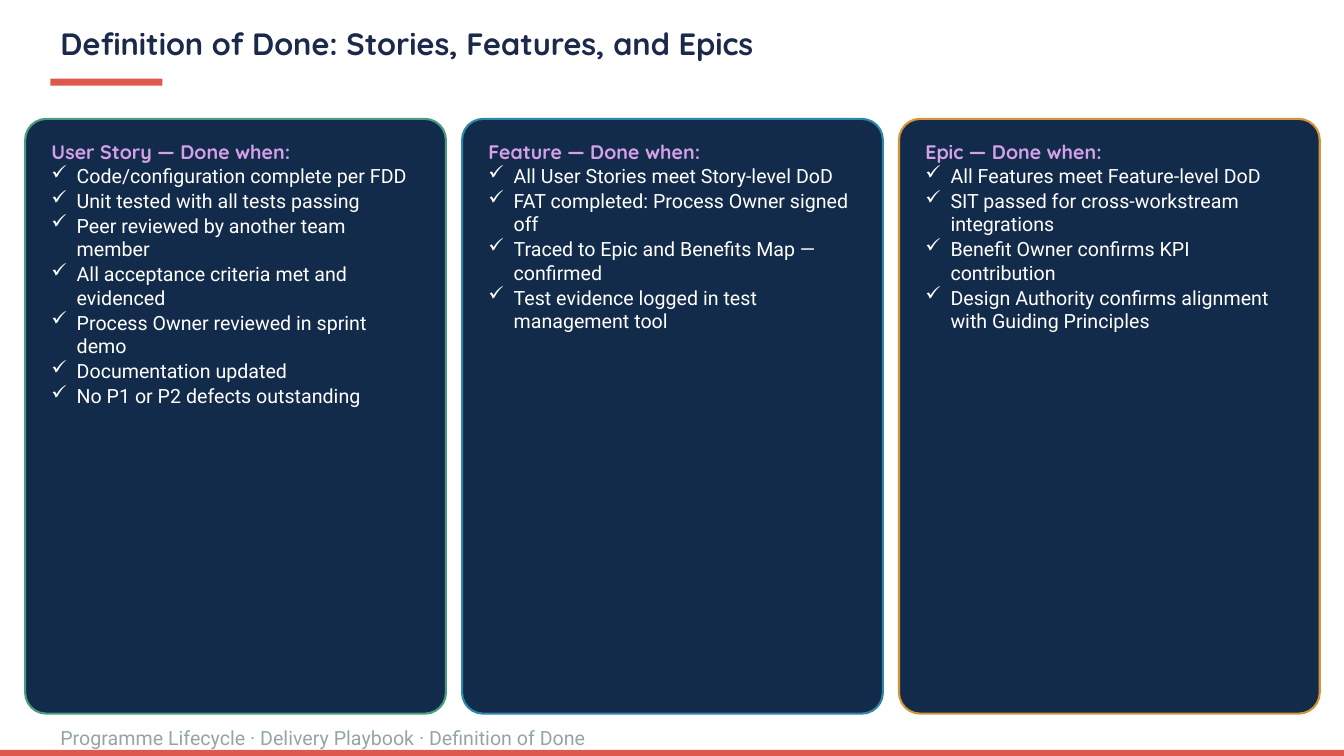
from lxml import etree
from pptx import Presentation
from pptx.dml.color import RGBColor
from pptx.enum.shapes import MSO_SHAPE
from pptx.enum.text import MSO_ANCHOR, PP_ALIGN
from pptx.oxml.ns import qn
from pptx.util import Inches, Pt

RECT, ROUNDED = MSO_SHAPE.RECTANGLE, MSO_SHAPE.ROUNDED_RECTANGLE
TOP, MIDDLE = MSO_ANCHOR.TOP, MSO_ANCHOR.MIDDLE
LEFT = PP_ALIGN.LEFT
SLIDE_W, SLIDE_H = 13.33, 7.5
CORAL, NAVY = "DD594D", "132B4A"

TITLE = {"size": Pt(22), "name": "Quicksand", "bold": True, "color": "1B2A4A"}
HEADING = {"size": Pt(14), "name": "Quicksand", "bold": True, "color": "D4A0E8"}
ITEM = {"size": Pt(14), "name": "Roboto", "bold": False, "color": "FFFFFF"}
FOOTER = {**ITEM, "color": "95A5A6"}

LEVELS = [
    ("User Story — Done when:", "4A9B7F", [
        "Code/configuration complete per FDD",
        "Unit tested with all tests passing",
        "Peer reviewed by another team member",
        "All acceptance criteria met and evidenced",
        "Process Owner reviewed in sprint demo",
        "Documentation updated",
        "No P1 or P2 defects outstanding",
    ]),
    ("Feature — Done when:", "2E86AB", [
        "All User Stories meet Story-level DoD",
        "FAT completed: Process Owner signed off",
        "Traced to Epic and Benefits Map — confirmed",
        "Test evidence logged in test management tool",
    ]),
    ("Epic — Done when:", "D4943A", [
        "All Features meet Feature-level DoD",
        "SIT passed for cross-workstream integrations",
        "Benefit Owner confirms KPI contribution",
        "Design Authority confirms alignment with Guiding Principles",
    ]),
]


def rgb(hex_color):
    return RGBColor.from_string(hex_color)


def box_lengths(box):
    return [Inches(length) for length in box]


def write(paragraph, text, style):
    run = paragraph.add_run()
    run.text = text
    for attribute, value in style.items():
        if attribute == "color":
            run.font.color.rgb = rgb(value)
        else:
            setattr(run.font, attribute, value)


def add_check_mark(paragraph):
    """Give the paragraph a hanging tick bullet."""
    properties = paragraph._p.get_or_add_pPr()
    properties.set("marL", str(Inches(0.25)))
    properties.set("indent", str(-Inches(0.25)))
    etree.SubElement(properties, qn("a:buChar")).set("char", "✓")
    paragraph.space_after = Pt(1)


def add_panel(slide, preset, box, fill):
    panel = slide.shapes.add_shape(preset, *box_lengths(box))
    panel.shadow.inherit = False
    panel.fill.solid()
    panel.fill.fore_color.rgb = rgb(fill)
    panel.line.fill.background()
    return panel


def add_header(slide, box, text):
    left, top, width, height = box
    title = slide.shapes.title
    title.left, title.top, title.width, title.height = box_lengths(box)
    title.text_frame.vertical_anchor = MIDDLE
    paragraph = title.text_frame.paragraphs[0]
    paragraph.alignment = LEFT
    paragraph.line_spacing = 0.9
    write(paragraph, text, TITLE)
    add_panel(slide, RECT, (left, top + height + 0.05, 1.11, 0.07), CORAL)


def add_card(slide, box, heading, accent, criteria):
    card = add_panel(slide, ROUNDED, box, NAVY)
    card.adjustments[0] = 0.05
    card.line.color.rgb = rgb(accent)
    card.line.width = Pt(1.5)
    frame = card.text_frame
    layout = {"word_wrap": True, "vertical_anchor": TOP,
              "margin_left": Inches(0.2), "margin_right": Inches(0.2),
              "margin_top": Inches(0.15), "margin_bottom": Inches(0.15)}
    for attribute, value in layout.items():
        setattr(frame, attribute, value)
    frame.paragraphs[0].alignment = LEFT
    write(frame.paragraphs[0], heading, HEADING)
    for criterion in criteria:
        paragraph = frame.add_paragraph()
        paragraph.alignment = LEFT
        add_check_mark(paragraph)
        write(paragraph, criterion, ITEM)


def add_cards(slide, box, levels, gap):
    left, top, width, height = box
    card_width = (width - gap * (len(levels) - 1)) / len(levels)
    for index, level in enumerate(levels):
        card_left = left + index * (card_width + gap)
        add_card(slide, (card_left, top, card_width, height), *level)


def add_footer(slide, box, text):
    left, top, width, height = box
    bar_height = 0.06
    add_panel(slide, RECT, (0, SLIDE_H - bar_height, SLIDE_W, bar_height), CORAL)
    caption = slide.shapes.add_textbox(*box_lengths(box))
    caption.text_frame.word_wrap = True
    write(caption.text_frame.paragraphs[0], text, FOOTER)


def main():
    deck = Presentation()
    deck.slide_width, deck.slide_height = Inches(SLIDE_W), Inches(SLIDE_H)
    slide = deck.slides.add_slide(deck.slide_layouts[5])
    slide.background.fill.solid()
    slide.background.fill.fore_color.rgb = rgb("FFFFFF")
    add_header(slide, (0.5, 0.17, 12.33, 0.56),
               "Definition of Done: Stories, Features, and Epics")
    add_cards(slide, (0.25, 1.18, 12.84, 5.9), LEVELS, gap=0.16)
    add_footer(slide, (0.5, 7.15, 5.56, 0.25),
               "Programme Lifecycle · Delivery Playbook · Definition of Done")
    deck.save("out.pptx")


if __name__ == "__main__":
    main()
